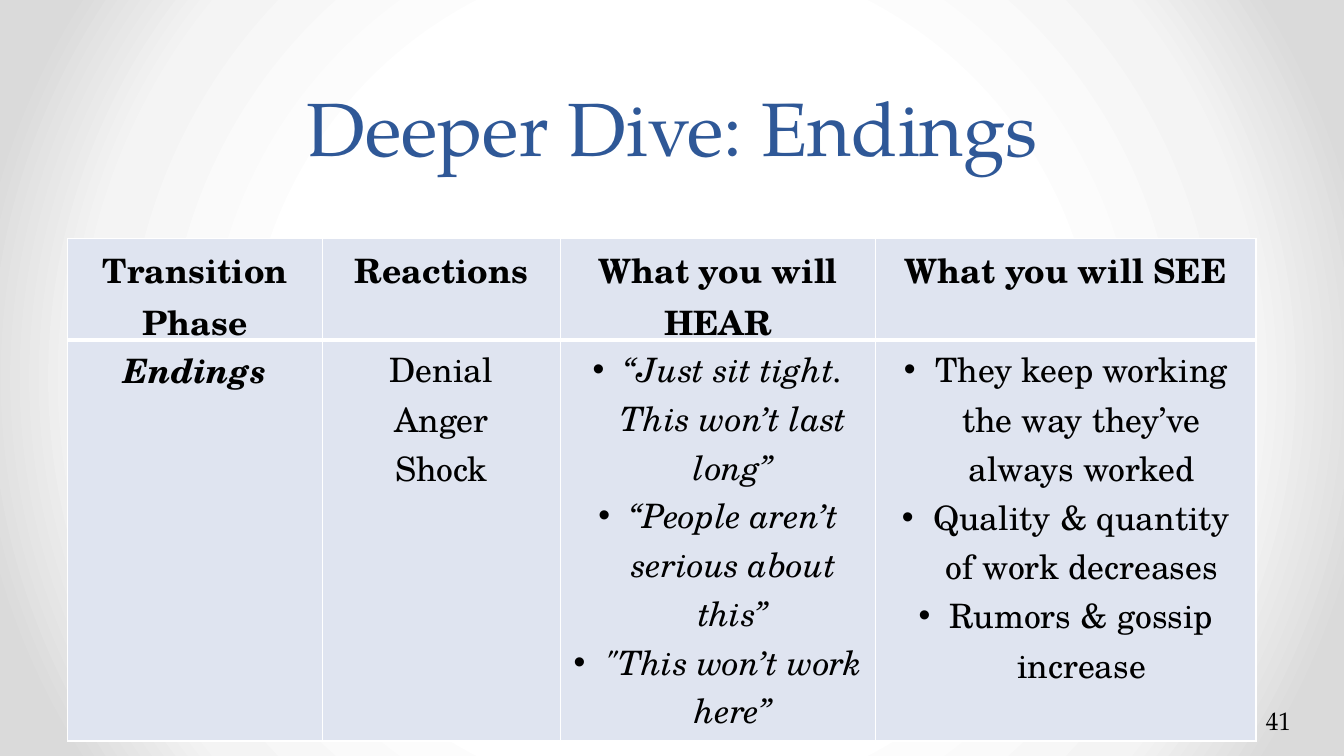
from lxml import etree
from pptx import Presentation
from pptx.dml.color import RGBColor
from pptx.enum.text import MSO_ANCHOR, PP_ALIGN
from pptx.oxml import parse_xml
from pptx.oxml.ns import qn
from pptx.util import Cm, Pt

BLUE = RGBColor(0x2F, 0x58, 0x97)
BLACK = RGBColor(0, 0, 0)
PALE = RGBColor(0xDF, 0xE4, 0xF0)
WHITE = RGBColor(255, 255, 255)
STOPS = [(50, WHITE), (76, RGBColor(0xF4, 0xF4, 0xF4)),
         (92, RGBColor(0xDA, 0xDA, 0xDA))]
SERIF = "TeX Gyre Pagella"
BOOK = "TeX Gyre Schola"
NS = 'xmlns:a="http://schemas.openxmlformats.org/drawingml/2006/main"'

HEADS = ["Transition Phase", "Reactions", "What you will HEAR",
         "What you will SEE"]
# Each body cell: its paragraphs and their format
BODY = [
    (["Endings"], dict(bold=True, italic=True)),
    (["Denial\nAnger\nShock"], {}),
    (["“Just sit tight. This won’t last long”",
      "“People aren’t serious about this”",
      "\"This won’t work here”"], dict(italic=True, dot=True)),
    (["They keep working the way they’ve always worked",
      "Quality & quantity of work decreases",
      "Rumors & gossip increase"], dict(dot=True)),
]
WIDTHS = [6.43, 5.99, 7.95, 9.58]
HEIGHTS = [2.54, 10.11]


def write(frame, paras, size=24, font=BOOK, color=BLACK, bold=False,
          italic=False, align=PP_ALIGN.CENTER, dot=False, lead=None):
    """Fill a text frame; a newline in a paragraph is a line break."""
    frame.word_wrap = True
    for i, text in enumerate(paras):
        para = frame.add_paragraph() if i else frame.paragraphs[0]
        para.alignment = align
        if lead:
            para.line_spacing = Pt(lead)
        for j, line in enumerate(text.split("\n")):
            if j:
                para.add_line_break()
            run = para.add_run()
            run.text = line
            face = run.font
            face.size, face.name = Pt(size), font
            face.bold, face.italic = bold, italic
            face.color.rgb = color
        if dot:
            props = para._p.get_or_add_pPr()
            props.set("marL", str(Cm(0.79)))
            props.set("indent", str(-Cm(0.79)))
            etree.SubElement(props, qn("a:buFont")).set("typeface", "Arial")
            etree.SubElement(props, qn("a:buChar")).set("char", "•")


def edge(cell, base):
    """Draw the white cell borders, with the given bottom width."""
    props = cell._tc.get_or_add_tcPr()
    for i, side in enumerate("LRTB"):
        wide = Pt(base if side == "B" else 1)
        props.insert(i, parse_xml(
            f'<a:ln{side} {NS} w="{wide}"><a:solidFill>'
            f'<a:srgbClr val="{WHITE}"/></a:solidFill></a:ln{side}>'))


def back(slide):
    """Round gradient from a white centre to grey edges."""
    slide.background.fill.gradient()
    old = next(slide.element.iter(qn("a:gradFill")))
    stops = "".join(f'<a:gs pos="{pos * 1000}"><a:srgbClr val="{tint}"/></a:gs>'
                    for pos, tint in STOPS)
    new = parse_xml(
        f'<a:gradFill {NS} rotWithShape="1"><a:gsLst>{stops}</a:gsLst>'
        '<a:path path="circle"><a:fillToRect l="50000" t="50000" '
        'r="50000" b="50000"/></a:path></a:gradFill>')
    old.getparent().replace(old, new)


def label(slide, box, text, anchor=MSO_ANCHOR.TOP, **form):
    frame = slide.shapes.add_textbox(*map(Cm, box)).text_frame
    frame.vertical_anchor = anchor
    write(frame, [text], **form)


def grid(slide, left, top):
    box = map(Cm, (left, top, sum(WIDTHS), sum(HEIGHTS)))
    table = slide.shapes.add_table(2, len(HEADS), *box).table
    for row, tall in zip(table.rows, HEIGHTS):
        row.height = Cm(tall)
    for col, wide in zip(table.columns, WIDTHS):
        col.width = Cm(wide)
    # Header row, then body row
    rows = [[([head], dict(bold=True)) for head in HEADS], BODY]
    for r, row in enumerate(rows):
        for c, (paras, form) in enumerate(row):
            cell = table.cell(r, c)
            cell.fill.solid()
            cell.fill.fore_color.rgb = PALE
            edge(cell, 1 if r else 3)
            write(cell.text_frame, paras, **form)


def main():
    deck = Presentation()
    deck.slide_width, deck.slide_height = Cm(33.87), Cm(19.05)
    slide = deck.slides.add_slide(deck.slide_layouts[6])
    back(slide)
    # Title
    label(slide, (1.7, 0, 30.48, 4.45), "Deeper Dive: Endings",
          MSO_ANCHOR.BOTTOM, size=54, font=SERIF, color=BLUE, lead=58)
    # Table
    grid(slide, 1.7, 6.02)
    # Page number
    label(slide, (31.65, 17.65, 2.08, 1.02), "41", size=18, font=SERIF,
          align=PP_ALIGN.LEFT)
    deck.save("out.pptx")


if __name__ == "__main__":
    main()
